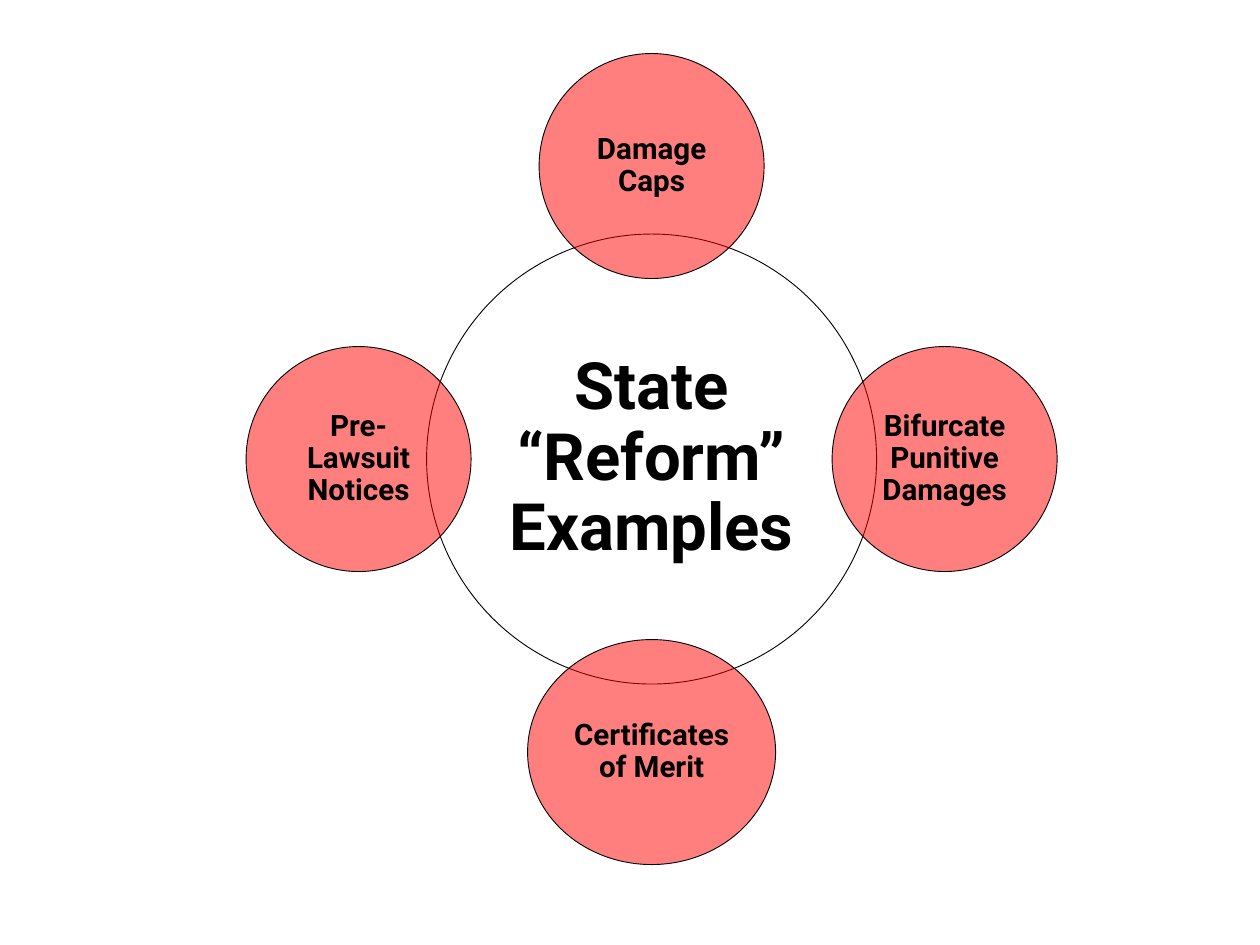
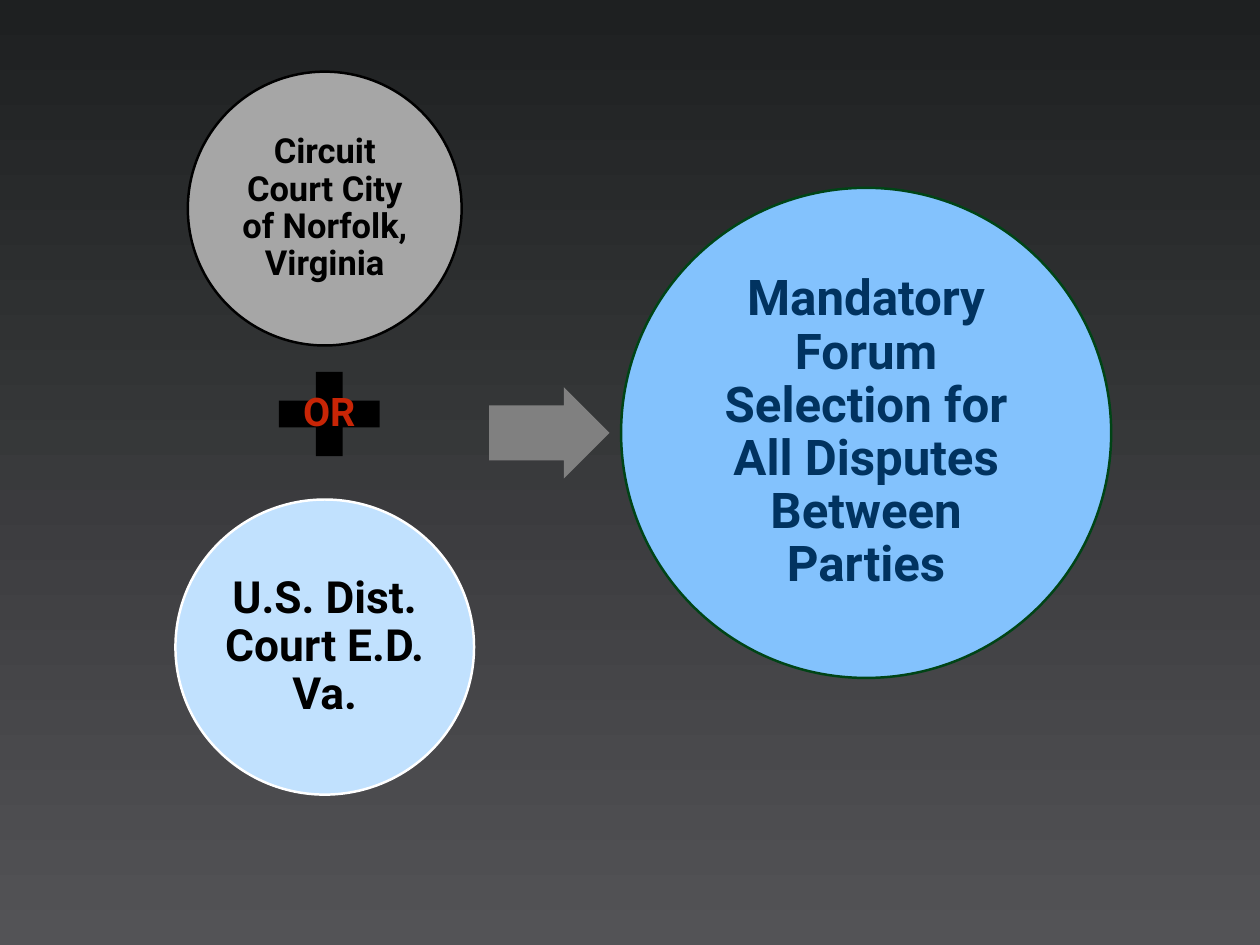
from lxml import etree
from pptx import Presentation
from pptx.dml.color import RGBColor
from pptx.enum.shapes import MSO_SHAPE as Shape
from pptx.enum.text import MSO_ANCHOR as Anchor, PP_ALIGN as Align
from pptx.oxml.ns import qn
from pptx.util import Cm, Pt

COLORS = {
    "black": "000000",
    "white": "FFFFFF",
    "red": "FF0000",
    "dark top": "1E2021",
    "dark bottom": "535356",
    "grey": "A6A6A6",
    "arrow": "808080",
    "pale blue": "C1E1FE",
    "blue": "83C2FD",
    "navy": "013360",
    "green": "004416",
    "brick": "C82506",
}
FONT = "Roboto"


def rgb(name):
    return RGBColor.from_string(COLORS[name])


def add_figure(page, kind, center, size, fill, line=None, line_width=2,
               text=None, text_size=24, text_color="black", opacity=100):
    (x, y), (width, height) = center, size
    figure = page.shapes.add_shape(
        kind, Cm(x - width / 2), Cm(y - height / 2), Cm(width), Cm(height))
    figure.shadow.inherit = False
    figure.fill.solid()
    figure.fill.fore_color.rgb = rgb(fill)
    if opacity < 100:
        color = figure.fill._xPr.find(qn("a:solidFill"))[0]
        etree.SubElement(color, qn("a:alpha")).set("val", str(opacity * 1000))
    if line:
        figure.line.color.rgb = rgb(line)
        figure.line.width = Pt(line_width)
    else:
        figure.line.fill.background()
    if text:
        frame = figure.text_frame
        frame.word_wrap = True
        frame.vertical_anchor = Anchor.MIDDLE
        inset = Cm(text_size * 0.0035)
        frame.margin_left = frame.margin_right = inset
        frame.margin_top = frame.margin_bottom = inset
        para = frame.paragraphs[0]
        para.alignment = Align.CENTER
        para.line_spacing = 0.9
        span = para.add_run()
        span.text = text
        span.font.name = FONT
        span.font.size = Pt(text_size)
        span.font.bold = True
        span.font.color.rgb = rgb(text_color)
    return figure


deck = Presentation()
deck.slide_width, deck.slide_height = Cm(36.12), Cm(27.09)
blank = deck.slide_layouts[6]

page = deck.slides.add_slide(blank)
page.background.fill.solid()
page.background.fill.fore_color.rgb = rgb("white")

hub_x, hub_y = 18.68, 13.16
reach = 8.4
add_figure(page, Shape.OVAL, (hub_x, hub_y), (12.9, 12.9), "white", "black", 0.75,
           "State “Reform” Examples", 53, opacity=50)
for text, across, down, width in [
    ("Damage Caps", 0, -1, 6.45),
    ("Bifurcate Punitive Damages", 1, 0, 6.45),
    ("Certificates of Merit", 0, 1, 7.11),
    ("Pre-Lawsuit Notices", -1, 0, 6.45),
]:
    center = (hub_x + across * reach, hub_y + down * reach)
    add_figure(page, Shape.OVAL, center, (width, 6.45), "red", "black", 0.75,
               text, opacity=50)

page = deck.slides.add_slide(blank)
backdrop = page.background.fill
backdrop.gradient()
backdrop.gradient_angle = 270
for stop, name in zip(backdrop.gradient_stops, ["dark top", "dark bottom"]):
    stop.color.rgb = rgb(name)

court_x, result_y = 9.31, 12.41
add_figure(page, Shape.OVAL, (court_x, 5.98), (7.85, 7.85), "grey", "black",
           text="Circuit Court City of Norfolk, Virginia", text_size=28)
add_figure(page, Shape.MATH_PLUS, (9.44, 11.87), (3.94, 3.28), "black",
           text="OR", text_size=32, text_color="brick")
add_figure(page, Shape.OVAL, (court_x, 18.55), (8.56, 8.46), "pale blue", "white",
           text="U.S. Dist. Court E.D. Va.", text_size=36)
arrow = add_figure(page, Shape.RIGHT_ARROW, (15.75, result_y), (3.45, 2.62), "arrow")
arrow.adjustments[0] = 0.6
arrow.adjustments[1] = 0.5
add_figure(page, Shape.OVAL, (24.83, result_y), (14.05, 14.05), "blue", "green",
           text="Mandatory Forum Selection for All Disputes Between Parties",
           text_size=40, text_color="navy")

deck.save("out.pptx")
